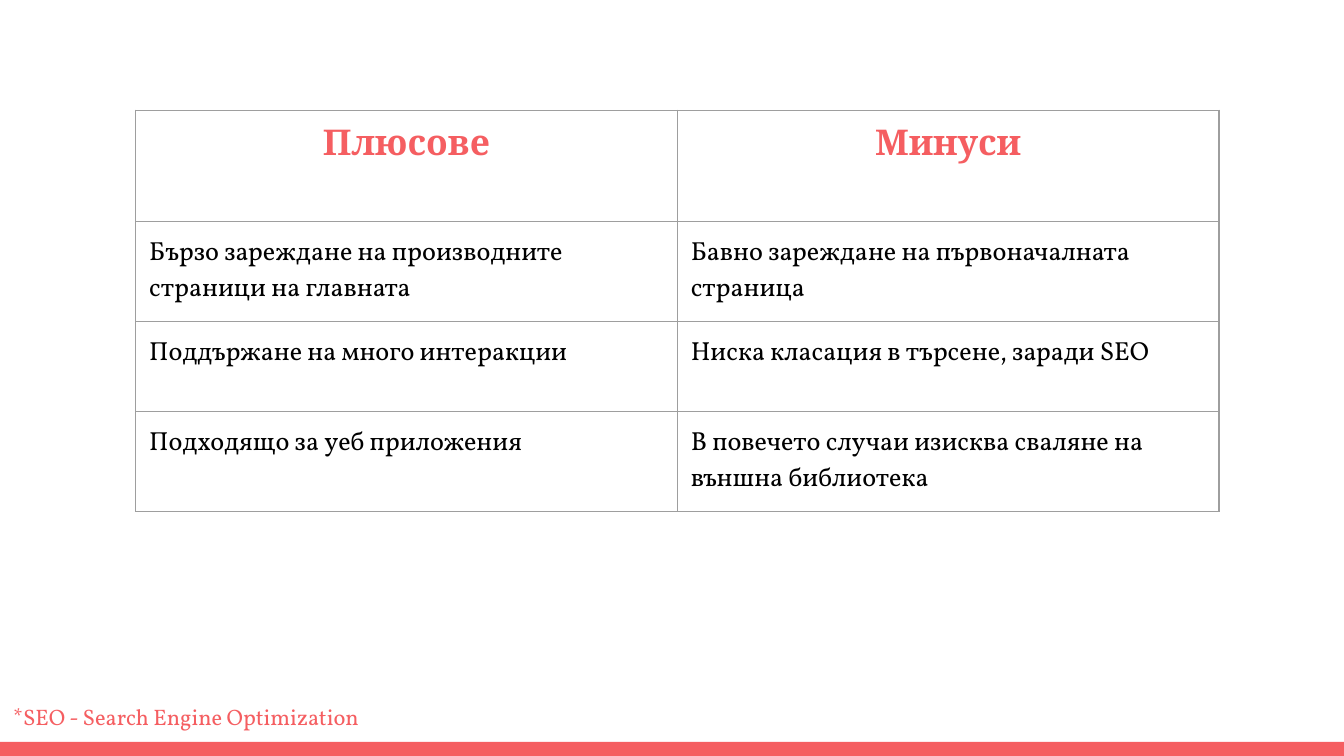
"""Build a slide that compares pluses and minuses in a bordered table."""
from dataclasses import dataclass

import pptx
import pptx.dml.color
import pptx.enum.shapes
import pptx.enum.text
import pptx.oxml
import pptx.oxml.ns
import pptx.util
from pptx.util import Inches


@dataclass(frozen=True)
class Theme:
    accent: str = "F55E61"
    text: str = "000000"
    border: str = "9E9E9E"
    border_width: float = 0.75
    head_font: str = "Cambria"
    body_font: str = "Vollkorn"
    head_size: int = 19
    body_size: int = 14
    note_size: int = 12


THEME = Theme()
HEADINGS = ("Плюсове", "Минуси")
POINTS = (
    ("Бързо зареждане на производните страници на главната",
     "Бавно зареждане на първоначалната страница"),
    ("Поддържане на много интеракции",
     "Ниска класация в търсене, заради SEO"),
    ("Подходящо за уеб приложения",
     "В повечето случаи изисква сваляне на външна библиотека"),
)


def rgb(value):
    return pptx.dml.color.RGBColor.from_string(value)


def add_run(p, text, font, size, color, bold=False):
    r = p.add_run()
    r.text = text
    r.font.name = font
    r.font.size = pptx.util.Pt(size)
    r.font.bold = bold
    r.font.color.rgb = rgb(color)


def set_margins(box):
    box.margin_left = box.margin_right = Inches(0.1)
    box.margin_top = box.margin_bottom = Inches(0.1)


def set_borders(cell):
    tc_pr = cell._tc.get_or_add_tcPr()
    width = pptx.util.Pt(THEME.border_width)
    for side in ("lnL", "lnR", "lnT", "lnB"):
        tc_pr.append(pptx.oxml.parse_xml(
            f'<a:{side} {pptx.oxml.ns.nsdecls("a")} w="{width}"><a:solidFill>'
            f'<a:srgbClr val="{THEME.border}"/></a:solidFill></a:{side}>'))


def fill_cell(cell, text, heading):
    set_margins(cell)
    set_borders(cell)
    cell.fill.background()
    p = cell.text_frame.paragraphs[0]
    if heading:
        p.alignment = pptx.enum.text.PP_ALIGN.CENTER
        add_run(p, text, THEME.head_font, THEME.head_size, THEME.accent, True)
    else:
        add_run(p, text, THEME.body_font, THEME.body_size, THEME.text)


def add_comparison(s):
    rows = (HEADINGS, *POINTS)
    table = s.shapes.add_table(len(rows), len(HEADINGS), Inches(1.01), Inches(0.82),
                               Inches(8.06), Inches(2.84)).table
    table.first_row = table.horz_banding = False
    for column in table.columns:
        column.width = Inches(4.03)
    for i, row in enumerate(rows):
        table.rows[i].height = Inches(0.67 if i else 0.83)
        for j, text in enumerate(row):
            fill_cell(table.cell(i, j), text, heading=i == 0)


def add_bar(s):
    sp = s.shapes.add_shape(pptx.enum.shapes.MSO_SHAPE.RECTANGLE,
                            0, Inches(5.52), Inches(10), Inches(0.11))
    sp.shadow.inherit = False
    sp.fill.solid()
    sp.fill.fore_color.rgb = rgb(THEME.accent)
    sp.line.fill.background()


def add_footnote(s, text):
    tf = s.shapes.add_textbox(0, Inches(5.13), Inches(6.52), Inches(0.4)).text_frame
    tf.word_wrap = True
    tf.auto_size = pptx.enum.text.MSO_AUTO_SIZE.SHAPE_TO_FIT_TEXT
    set_margins(tf)
    add_run(tf.paragraphs[0], text, THEME.body_font, THEME.note_size, THEME.accent)


def main():
    prs = pptx.Presentation()
    prs.slide_width = Inches(10)
    prs.slide_height = prs.slide_width * 9 // 16
    s = prs.slides.add_slide(prs.slide_layouts[6])
    add_bar(s)
    add_comparison(s)
    add_footnote(s, "*SEO - Search Engine Optimization")
    prs.save("out.pptx")


if __name__ == "__main__":
    main()
